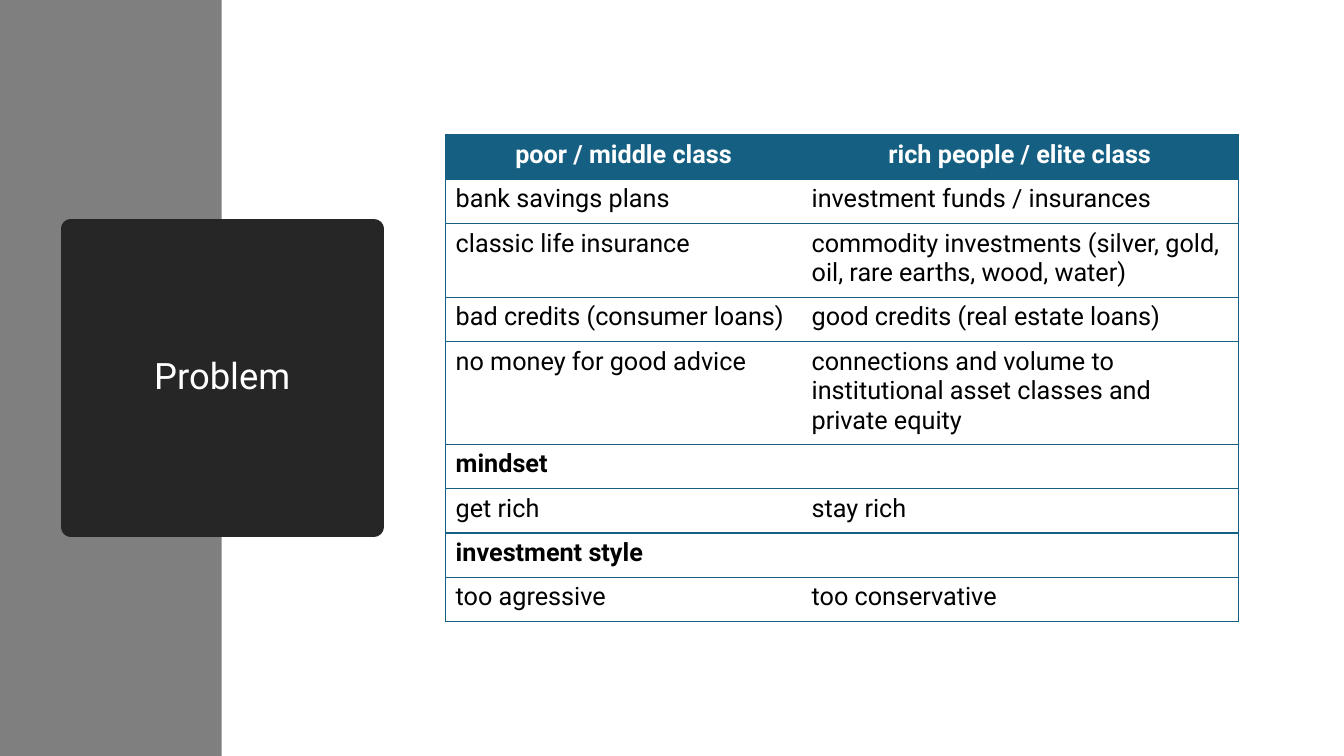
"""Build a slide comparing how poor and rich people invest."""
from lxml.etree import SubElement
from pptx import Presentation
from pptx.dml.color import RGBColor
from pptx.enum.shapes import MSO_SHAPE as Shape
from pptx.enum.text import MSO_ANCHOR as Anchor, PP_ALIGN as Align
from pptx.oxml.ns import qn
from pptx.util import Inches, Pt

TITLE = "Problem"
HEADINGS = ("poor / middle class", "rich people / elite class")
COMPARISON = [
    ("bank savings plans", "investment funds / insurances", 1),
    ("classic life insurance",
     "commodity investments (silver, gold, oil, rare earths, wood, water)", 2),
    ("bad credits (consumer loans)", "good credits (real estate loans)", 1),
    ("no money for good advice",
     "connections and volume to institutional asset classes and private equity", 3),
    ("mindset", "", 1),
    ("get rich", "stay rich", 1),
    ("investment style", "", 1),
    ("too agressive", "too conservative", 1),
]
COLORS = {"band": "7F7F7F", "title": "262626", "accent": "156082",
          "light": "FFFFFF", "dark": "000000"}
FONT = "Roboto"
WIDTH, HEIGHT = 13.33, 7.5
TABLE_LEFT, TABLE_TOP = 4.42, 1.34
COLUMNS = (3.53, 4.33)
LINE_HEIGHT, ROW_PADDING = 0.29, 0.15


def color(name):
    return RGBColor.from_string(COLORS[name])


def style_text(paragraph, size, ink, bold=False, align=Align.LEFT):
    paragraph.alignment = align
    font = paragraph.font
    for part in [font] + [run.font for run in paragraph.runs]:
        part.name, part.size, part.bold = FONT, Pt(size), bold
        part.color.rgb = color(ink)


def add_block(slide, kind, box, fill):
    block = slide.shapes.add_shape(kind, *map(Inches, box))
    block.shadow.inherit = False
    block.fill.solid()
    block.fill.fore_color.rgb = color(fill)
    block.line.fill.background()
    return block


def add_title(slide):
    title = add_block(slide, Shape.RECTANGLE, (0.7, 2.27, 3.01, 2.96), "title")
    title.line.color.rgb = color("title")
    title.line.width = Pt(13.75)
    SubElement(title.line.fill._xPr, qn("a:round"))
    frame = title.text_frame
    frame.text = TITLE
    frame.word_wrap = True
    frame.vertical_anchor = Anchor.MIDDLE
    frame.paragraphs[0].line_spacing = 0.9
    style_text(frame.paragraphs[0], 26, "light", align=Align.CENTER)


def set_borders(cell, visible):
    properties = cell._tc.get_or_add_tcPr()
    for side in "LRTB":
        edge = SubElement(properties, qn(f"a:ln{side}"), w=str(Pt(1)))
        if side in visible:
            fill = SubElement(edge, qn("a:solidFill"))
            SubElement(fill, qn("a:srgbClr"), val=COLORS["accent"])
        else:
            SubElement(edge, qn("a:noFill"))


def add_comparison(slide):
    rows = [(*HEADINGS, 1)] + COMPARISON
    heights = [ROW_PADDING + LINE_HEIGHT * lines for *_, lines in rows]
    box = (TABLE_LEFT, TABLE_TOP, sum(COLUMNS), sum(heights))
    table = slide.shapes.add_table(len(rows), len(COLUMNS), *map(Inches, box)).table
    table.horz_banding = False
    for column, width in zip(table.columns, COLUMNS):
        column.width = Inches(width)
    for r, (*texts, _) in enumerate(rows):
        table.rows[r].height = Inches(heights[r])
        heading = r == 0
        section = not texts[1]
        for c, text in enumerate(texts):
            cell = table.cell(r, c)
            set_borders(cell, "TB" + "LR"[c])
            cell.fill.solid()
            cell.fill.fore_color.rgb = color("accent" if heading else "light")
            cell.text_frame.text = text
            style_text(cell.text_frame.paragraphs[0], 18,
                       "light" if heading else "dark", heading or section,
                       Align.CENTER if heading else Align.LEFT)


def main():
    deck = Presentation()
    deck.slide_width, deck.slide_height = Inches(WIDTH), Inches(HEIGHT)
    slide = deck.slides.add_slide(deck.slide_layouts[6])
    add_block(slide, Shape.RECTANGLE, (0, 0, 2.2, HEIGHT), "band")
    add_title(slide)
    add_comparison(slide)
    deck.save("out.pptx")


if __name__ == "__main__":
    main()
